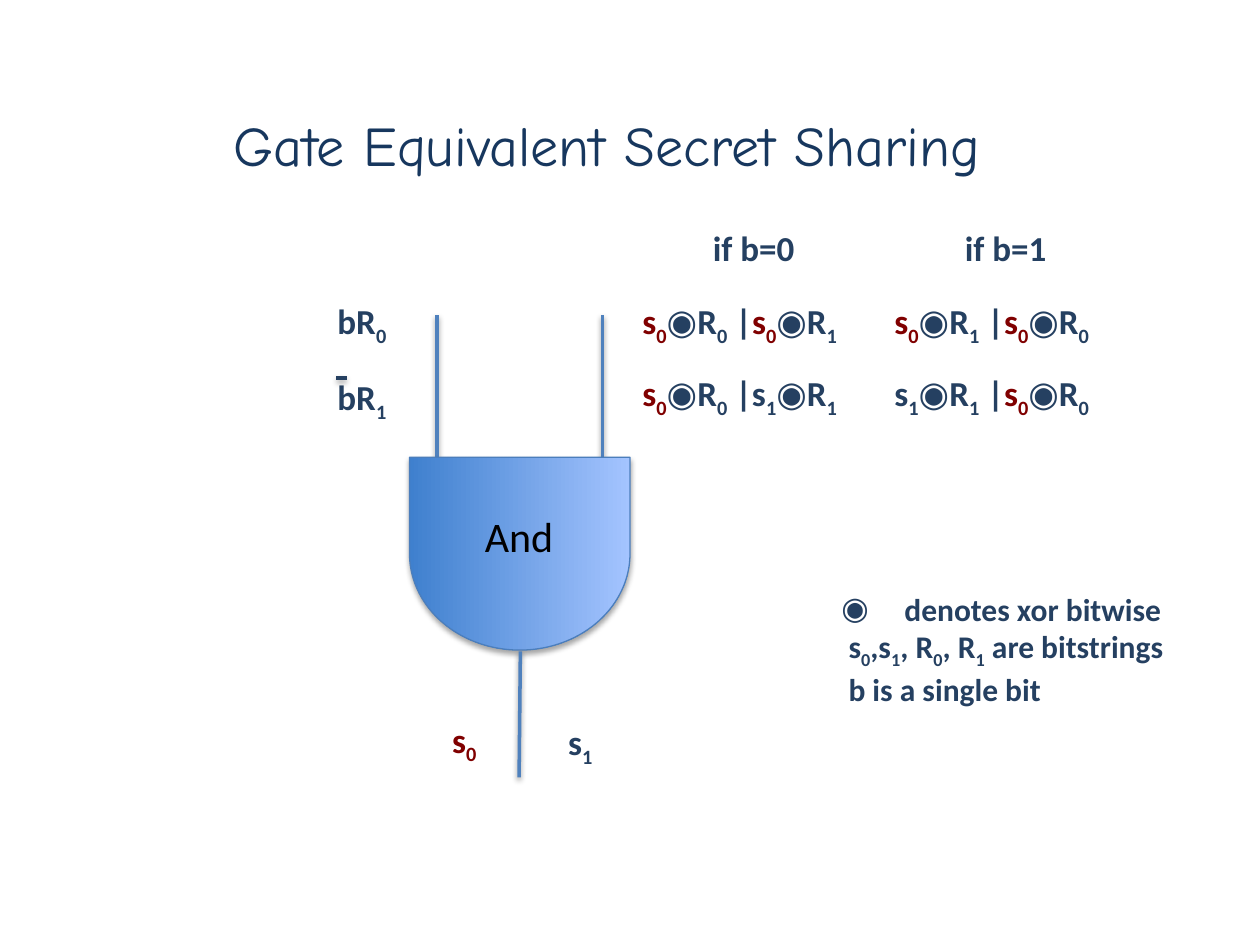
import itertools

import pptx
import pptx.dml.color
import pptx.enum.dml
import pptx.enum.shapes
import pptx.enum.text
import pptx.oxml
import pptx.util
from pptx.util import Inches

RGBColor = pptx.dml.color.RGBColor
TITLE = RGBColor(0x17, 0x37, 0x5E)
NAVY = RGBColor(0x25, 0x40, 0x61)
RED = RGBColor(0x80, 0x00, 0x00)
BLACK = RGBColor(0x00, 0x00, 0x00)
WIRE = RGBColor(0x4F, 0x81, 0xBD)
GATE_LINE = RGBColor(0x4B, 0x7E, 0xBC)
GATE_START = RGBColor(0x3F, 0x80, 0xCE)
GATE_END = RGBColor(0xA4, 0xC4, 0xFF)
NS = 'xmlns:a="http://schemas.openxmlformats.org/drawingml/2006/main"'


def split_formula(text, red_s0):
    """Split text into (string, subscript, symbol, red) runs; "_" marks a subscript."""
    chars = []
    for i, ch in enumerate(text):
        if ch == "_":
            continue
        sub = text[i - 1:i] == "_"
        start = i - 2 if sub else i
        red = red_s0 and text[start:start + 3] == "s_0"
        chars.append((ch, sub, ch == "◉", red))
    for key, group in itertools.groupby(chars, key=lambda c: c[1:]):
        yield ("".join(c[0] for c in group), *key)


class GateSlide:
    font = "Calibri"
    symbol_font = "Arial"
    title_font = "Comic Neue"

    def __init__(self, prs):
        self.s = prs.slides.add_slide(prs.slide_layouts[5])

    def format_font(self, font, name, size, color, bold):
        font.name, font.size, font.bold = name, pptx.util.Pt(size), bold
        font.color.rgb = color

    def add_shadow(self, sp, alpha, dist):
        sp._element.spPr.append(pptx.oxml.parse_xml(
            f'<a:effectLst {NS}><a:outerShdw blurRad="40000" dist="{dist}" '
            f'dir="5400000" rotWithShape="0"><a:srgbClr val="000000">'
            f'<a:alpha val="{alpha}000"/></a:srgbClr></a:outerShdw></a:effectLst>'))

    def title(self, text, x, y, w, h):
        sp = self.s.shapes.title
        sp.left, sp.top, sp.width, sp.height = map(Inches, (x, y, w, h))
        tf = sp.text_frame
        tf.text = text
        tf.vertical_anchor = pptx.enum.text.MSO_ANCHOR.TOP
        p = tf.paragraphs[0]
        p.alignment = pptx.enum.text.PP_ALIGN.LEFT
        self.format_font(p.runs[0].font, self.title_font, 32, TITLE, False)

    def text(self, lines, x, y, w, h=0.44, size=20, color=NAVY, bold=True, red_s0=True):
        sp = self.s.shapes.add_textbox(*map(Inches, (x, y, w, h)))
        tf = sp.text_frame
        tf.word_wrap = False
        tf.auto_size = pptx.enum.text.MSO_AUTO_SIZE.SHAPE_TO_FIT_TEXT
        for i, line in enumerate(lines):
            p = tf.add_paragraph() if i else tf.paragraphs[0]
            for part, sub, symbol, red in split_formula(line, red_s0):
                r = p.add_run()
                r.text = part
                self.format_font(r.font, self.symbol_font if symbol else self.font,
                                 size, RED if red else color, bold)
                if sub:
                    r.font._element.set("baseline", "-25000")
        return tf

    def bullet(self, p, char, indent):
        pPr = p._p.get_or_add_pPr()
        pPr.set("marL", str(Inches(indent)))
        pPr.set("indent", str(-Inches(indent)))
        pPr.append(pptx.oxml.parse_xml(f'<a:buFont {NS} typeface="{self.symbol_font}"/>'))
        pPr.append(pptx.oxml.parse_xml(f'<a:buChar {NS} char="{char}"/>'))

    def line(self, x1, y1, x2, y2, color=WIRE):
        sp = self.s.shapes.add_connector(
            pptx.enum.shapes.MSO_CONNECTOR.STRAIGHT, *map(Inches, (x1, y1, x2, y2)))
        sp.line.color.rgb = color
        sp.line.width = pptx.util.Pt(2)
        self.add_shadow(sp, 38, 20000)

    def gate(self, x, y, w, h):
        sp = self.s.shapes.add_shape(
            pptx.enum.shapes.MSO_SHAPE.FLOWCHART_DELAY, *map(Inches, (x, y, w, h)))
        sp.rotation = 90
        sp.fill.gradient()
        sp.fill.gradient_angle = 90
        for stop, color, pos in zip(sp.fill.gradient_stops, (GATE_START, GATE_END), (0, 1)):
            stop.color.rgb = color
            stop.position = pos
        sp.line.color.rgb = GATE_LINE
        sp.line.width = pptx.util.Pt(0.75)
        self.add_shadow(sp, 35, 23000)


def main():
    prs = pptx.Presentation()
    prs.slide_width, prs.slide_height = Inches(10), Inches(7.5)
    slide = GateSlide(prs)
    slide.title("Gate Equivalent Secret Sharing", 1.75, 0.83, 6.81, 0.64)

    for x in (4.78, 3.47):
        slide.line(x, 2.5, x, 3.63)
    slide.gate(3.36, 3.52, 1.53, 1.75)
    slide.text(["And"], 3.75, 4, 0.75, 0.5, size=24, color=BLACK, bold=False)
    slide.line(4.13, 5.17, 4.12, 6.17)
    slide.text(["s_0"], 3.49, 5.65, 0.41)
    slide.text(["s_1"], 4.41, 5.67, 0.41)

    slide.text(["bR_0"], 2.58, 2.33, 0.61)
    slide.text(["bR_1"], 2.58, 2.93, 0.61)
    slide.line(2.67, 3, 2.75, 3, NAVY)

    cases = [
        ("if b=0", "s_0◉R_0 |s_0◉R_1", "s_0◉R_0 |s_1◉R_1"),
        ("if b=1", "s_0◉R_1 |s_0◉R_0", "s_1◉R_1 |s_0◉R_0"),
    ]
    for i, (heading, *shares) in enumerate(cases):
        x = 5 + 2 * i
        slide.text([heading], x + 0.56, 1.75, 0.86)
        for y, share in zip((2.33, 2.9), shares):
            slide.text([share], x, y, 1.82)

    legend = slide.text(
        ["denotes xor bitwise", " s_0,s_1, R_0, R_1 are bitstrings", " b is a single bit"],
        6.58, 4.63, 2.83, 1.01, size=18, red_s0=False)
    slide.bullet(legend.paragraphs[0], "◉", 0.5)

    prs.save("out.pptx")


if __name__ == "__main__":
    main()
